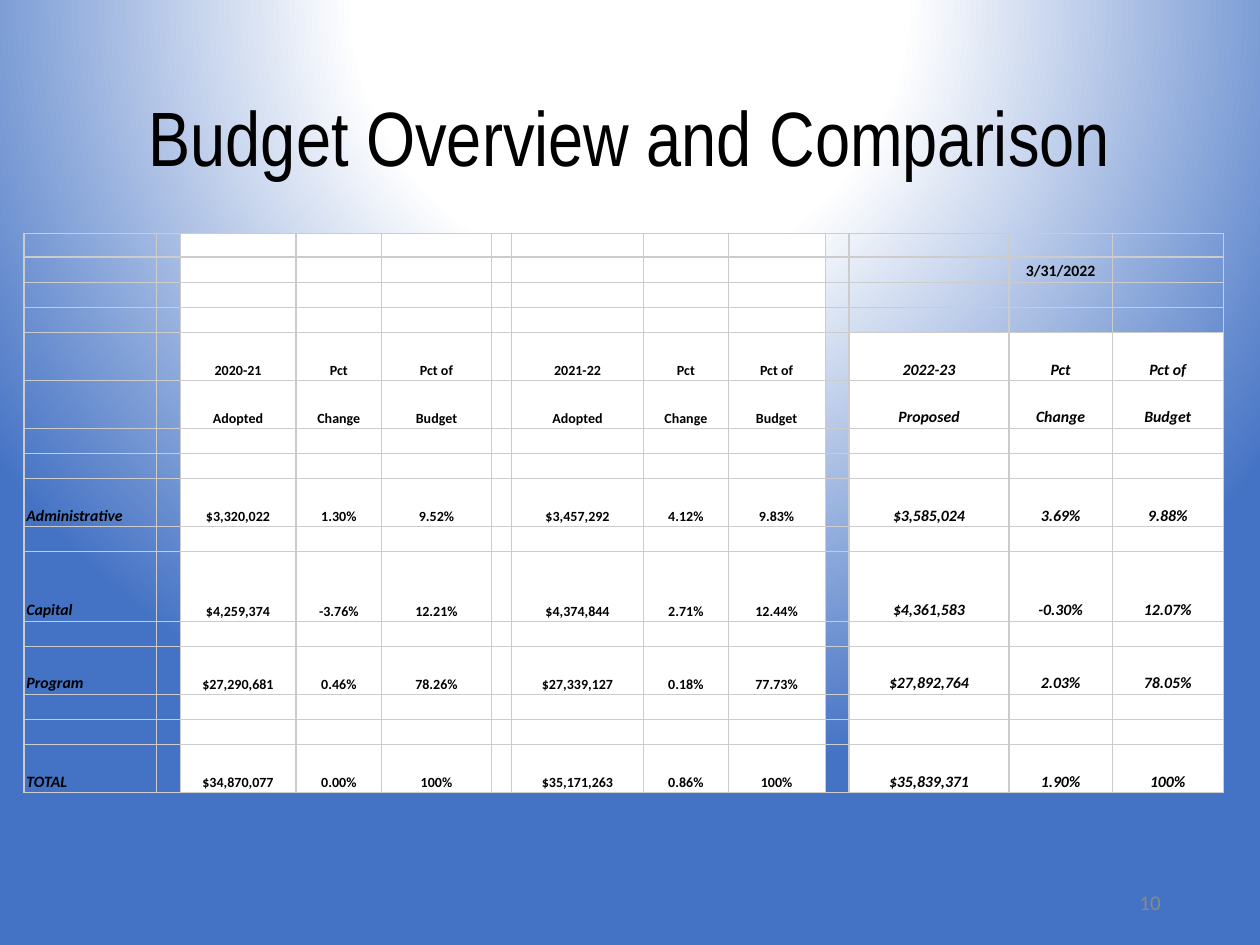
import pptx
import pptx.dml.color
import pptx.enum.text
import pptx.oxml
import pptx.oxml.ns
import pptx.util
from lxml import etree
from dataclasses import dataclass

Inches, Pt = pptx.util.Inches, pptx.util.Pt
ALIGN, ANCHOR = pptx.enum.text.PP_ALIGN, pptx.enum.text.MSO_ANCHOR
qn = pptx.oxml.ns.qn


@dataclass(frozen=True)
class Theme:
    title_font: str = "Arial Narrow"
    body_font: str = "Calibri"
    title_size: int = 44
    number_size: int = 12
    past_size: int = 8
    proposed_size: int = 9
    text: str = "000000"
    muted: str = "898989"
    panel: str = "FFFFFF"
    accent: str = "4472C4"
    border: str = "CCCCCC"
    border_pt: float = 0.75


THEME = Theme()
WIDTH, HEIGHT = Inches(10), Inches(7.5)

COL_WIDTHS = [1.05, 0.19, 0.92, 0.68, 0.87, 0.16, 1.05, 0.67, 0.77, 0.19, 1.27, 0.82, 0.88]
THIN, TALL, EXTRA = 0.2, 0.38, 0.55
ROW_HEIGHTS = [0.19, THIN, THIN, THIN, TALL, TALL, THIN, THIN, TALL,
               THIN, EXTRA, THIN, TALL, THIN, THIN, TALL]

# First column of each three-column year group
YEAR_COLS = (2, 6, 10)
PROPOSED_COL = YEAR_COLS[-1]
CLEAR_COLS = (0, 1, 9)
HEADER_ROW = 4
DATE_CELL = (1, 11)

# Row index: label, then amount, change and share for each year
BUDGET = {
    4: ("", "2020-21 | Pct | Pct of", "2021-22 | Pct | Pct of", "2022-23 | Pct | Pct of"),
    5: ("", "Adopted | Change | Budget", "Adopted | Change | Budget",
        "Proposed | Change | Budget"),
    8: ("Administrative", "$3,320,022 | 1.30% | 9.52%", "$3,457,292 | 4.12% | 9.83%",
        "$3,585,024 | 3.69% | 9.88%"),
    10: ("Capital", "$4,259,374 | -3.76% | 12.21%", "$4,374,844 | 2.71% | 12.44%",
         "$4,361,583 | -0.30% | 12.07%"),
    12: ("Program", "$27,290,681 | 0.46% | 78.26%", "$27,339,127 | 0.18% | 77.73%",
         "$27,892,764 | 2.03% | 78.05%"),
    15: ("TOTAL", "$34,870,077 | 0.00% | 100%", "$35,171,263 | 0.86% | 100%",
         "$35,839,371 | 1.90% | 100%"),
}


def rgb(value):
    return pptx.dml.color.RGBColor.from_string(value)


def set_attrs(obj, **values):
    for name, value in values.items():
        setattr(obj, name, value)


def write(tf, text, align, color=THEME.text, **font):
    p = tf.paragraphs[0]
    p.alignment = align
    r = p.add_run()
    r.text = text
    set_attrs(r.font, **font)
    r.font.color.rgb = rgb(color)
    return p


def set_background(s):
    """Radial gradient centred above the slide."""
    s.background.fill.solid()
    bg = s.element.find(".//" + qn("p:bgPr"))
    stops = [(0, THEME.panel), (35, THEME.panel), (100, THEME.accent)]
    gs = "".join(f'<a:gs pos="{pos * 1000}"><a:srgbClr val="{color}"/></a:gs>'
                 for pos, color in stops)
    grad = pptx.oxml.parse_xml(
        f'<a:gradFill {pptx.oxml.ns.nsdecls("a")} rotWithShape="1"><a:gsLst>{gs}</a:gsLst>'
        '<a:path path="circle"><a:fillToRect l="50000" t="-80000" r="50000" b="180000"/>'
        '</a:path></a:gradFill>')
    bg.replace(bg.find(qn("a:solidFill")), grad)


def set_title(s, text):
    sp = s.shapes.title
    set_attrs(sp, left=Inches(0.69), top=Inches(0.4), width=Inches(8.62), height=Inches(1.45))
    tf = sp.text_frame
    set_attrs(tf, vertical_anchor=ANCHOR.MIDDLE, word_wrap=True,
              auto_size=pptx.enum.text.MSO_AUTO_SIZE.NONE)
    p = write(tf, text, ALIGN.CENTER, name=THEME.title_font, size=Pt(THEME.title_size))
    p.line_spacing = 0.9


def add_page_number(s, text):
    sp = s.shapes.add_textbox(Inches(7.06), Inches(6.96), Inches(2.25), Inches(0.4))
    set_attrs(sp.text_frame, word_wrap=True, vertical_anchor=ANCHOR.MIDDLE)
    write(sp.text_frame, text, ALIGN.RIGHT, THEME.muted,
          name=THEME.body_font, size=Pt(THEME.number_size))


def add_borders(cell):
    tc_pr = cell._tc.get_or_add_tcPr()
    for side in ("lnL", "lnR", "lnT", "lnB"):
        ln = etree.SubElement(tc_pr, qn(f"a:{side}"), w=str(Pt(THEME.border_pt)))
        fill = etree.SubElement(ln, qn("a:solidFill"))
        etree.SubElement(fill, qn("a:srgbClr"), val=THEME.border)


def is_clear(row, col):
    return col in CLEAR_COLS or (col >= PROPOSED_COL and row < HEADER_ROW)


def cell_texts():
    """Map (row, column) to the text shown there."""
    texts = {DATE_CELL: "3/31/2022"}
    for row, (label, *years) in BUDGET.items():
        if label:
            texts[row, 0] = label
        for start, year in zip(YEAR_COLS, years):
            for offset, text in enumerate(year.split(" | ")):
                texts[row, start + offset] = text
    return texts


def format_cell(cell, row, col, text):
    add_borders(cell)
    if is_clear(row, col):
        cell.fill.background()
    else:
        cell.fill.solid()
        cell.fill.fore_color.rgb = rgb(THEME.panel)
    set_attrs(cell, vertical_anchor=ANCHOR.BOTTOM,
              margin_left=Inches(0.02), margin_right=Inches(0.02),
              margin_top=Inches(0.01), margin_bottom=Inches(0.01))
    if text:
        large = col == 0 or col >= PROPOSED_COL
        write(cell.text_frame, text, ALIGN.LEFT if col == 0 else ALIGN.CENTER,
              name=THEME.body_font, bold=True, italic=large and (row, col) != DATE_CELL,
              size=Pt(THEME.proposed_size if large else THEME.past_size))
    else:
        # Small end mark keeps the thin spacer rows thin
        etree.SubElement(cell.text_frame.paragraphs[0]._p, qn("a:endParaRPr"),
                         sz=str(THEME.past_size * 100))


def add_budget_table(s):
    sp = s.shapes.add_table(len(ROW_HEIGHTS), len(COL_WIDTHS), Inches(0.19), Inches(1.85),
                            Inches(sum(COL_WIDTHS)), Inches(sum(ROW_HEIGHTS)))
    table = sp.table
    set_attrs(table, first_row=False, horz_banding=False)
    for column, width in zip(table.columns, COL_WIDTHS):
        column.width = Inches(width)
    texts = cell_texts()
    for i, height in enumerate(ROW_HEIGHTS):
        table.rows[i].height = Inches(height)
        for j in range(len(COL_WIDTHS)):
            format_cell(table.cell(i, j), i, j, texts.get((i, j)))


def main():
    prs = pptx.Presentation()
    set_attrs(prs, slide_width=WIDTH, slide_height=HEIGHT)
    s = prs.slides.add_slide(prs.slide_layouts.get_by_name("Title Only"))
    set_background(s)
    set_title(s, "Budget Overview and Comparison")
    add_budget_table(s)
    add_page_number(s, "10")
    prs.save("out.pptx")


if __name__ == "__main__":
    main()
